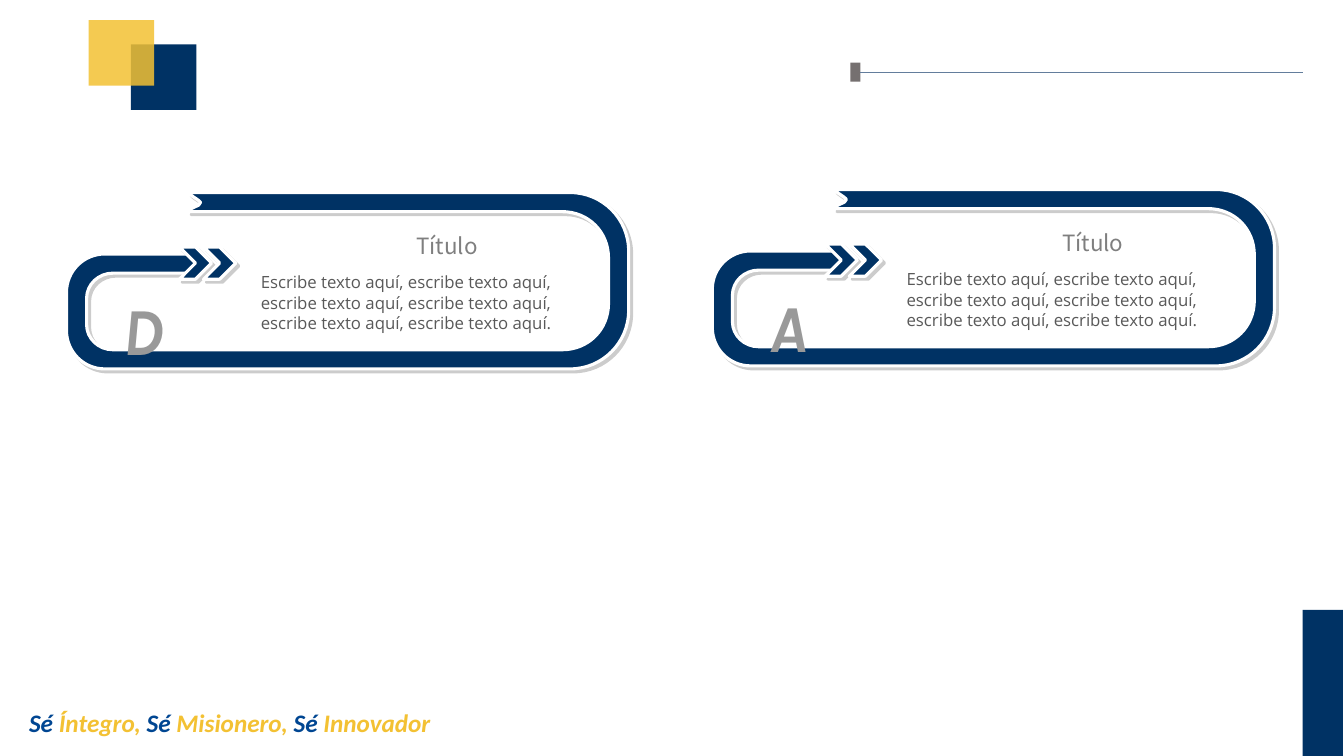
from lxml.etree import SubElement
from pptx import Presentation
from pptx.dml.color import RGBColor
from pptx.enum.shapes import MSO_CONNECTOR, MSO_SHAPE as SHAPE
from pptx.enum.text import MSO_AUTO_SIZE, PP_ALIGN as ALIGN
from pptx.oxml.ns import qn
from pptx.util import Inches, Pt

NAVY, GOLD, WHITE = "003264", "F3C133", "FFFFFF"
SLOGAN_BLUE = "004692"
BODY = ", ".join(["Escribe texto aquí"] + ["escribe texto aquí"] * 5) + "."

# Ribbon outline in inches from its corner: a pair is a line end,
# six numbers are two Bézier controls and an end.
RIBBON_START = (1.21, 0)
RIBBON = [
    (5, 0), (5.32, 0, 5.58, 0.26, 5.58, 0.58),
    (5.58, 1.17), (5.58, 1.49, 5.32, 1.75, 5, 1.75),
    (1.28, 1.75), (1.21, 1.75),
    (0.38, 1.75), (0.17, 1.75, 0, 1.58, 0, 1.37),
    (0, 0.99), (0, 0.78, 0.17, 0.61, 0.38, 0.61),
    (1.28, 0.61), (1.28, 0.8),
    (0.46, 0.8), (0.32, 0.8, 0.2, 0.91, 0.2, 1.05),
    (0.2, 1.31), (0.2, 1.45, 0.32, 1.56, 0.46, 1.56),
    (1.28, 1.56),
    (4.92, 1.56), (5.18, 1.56, 5.38, 1.36, 5.38, 1.1),
    (5.38, 0.65), (5.38, 0.39, 5.18, 0.19, 4.92, 0.19),
    (1.21, 0.19), (1.21, 0.15, 1.33, 0.14, 1.33, 0.1),
    (1.33, 0.08, 1.21, 0.02, 1.21, 0),
]


def color(code):
    return RGBColor.from_string(code)


def bend(shape, segments):
    """Turn the straight segments that have controls into Bézier curves."""
    lines = list(shape._element.iter(qn("a:lnTo")))
    for line, segment in zip(lines, segments):
        if len(segment) == 6:
            line.tag = qn("a:cubicBezTo")
            line.clear()
            for x, y in zip(segment[::2], segment[1::2]):
                SubElement(line, qn("a:pt"), x=str(Inches(x)), y=str(Inches(y)))


class SlideBuilder:
    """Holds the current slide and draws its elements in one style."""

    def __init__(self, slide):
        self.slide = slide
        self.shapes = slide.shapes

    def paint(self, shape, fill, opacity=None):
        shape.shadow.inherit = False
        shape.fill.solid()
        shape.fill.fore_color.rgb = color(fill)
        shape.line.fill.background()
        if opacity is not None:
            fill_color = shape.fill._xPr.find(qn("a:solidFill"))[0]
            SubElement(fill_color, qn("a:alpha"), val=str(opacity * 1000))
        return shape

    def paint_raised(self, shape):
        """Navy fill, white edge and a hard shadow to the lower right."""
        self.paint(shape, NAVY)
        shape.line.color.rgb = color(WHITE)
        shape.line.width = Pt(2.25)
        effects = shape._element.spPr.find(qn("a:effectLst"))
        shadow = SubElement(effects, qn("a:outerShdw"), blurRad="0",
                            dist=str(Pt(3)), dir=str(45 * 60000),
                            algn="tl", rotWithShape="0")
        shadow_color = SubElement(shadow, qn("a:srgbClr"), val="000000")
        SubElement(shadow_color, qn("a:alpha"), val="20000")

    def shape(self, kind, left, top, width, height):
        return self.shapes.add_shape(kind, Inches(left), Inches(top),
                                     Inches(width), Inches(height))

    def rectangle(self, left, top, width, height, fill, opacity=None):
        return self.paint(self.shape(SHAPE.RECTANGLE, left, top, width, height),
                          fill, opacity)

    def chevron(self, left, top, size):
        self.paint_raised(self.shape(SHAPE.CHEVRON, left, top, size, size))

    def ribbon(self, left, top):
        start, *ends = [(Inches(x), Inches(y)) for x, y in
                        [RIBBON_START] + [segment[-2:] for segment in RIBBON]]
        builder = self.shapes.build_freeform(*start)
        builder.add_line_segments(ends, close=True)
        shape = builder.convert_to_shape(Inches(left), Inches(top))
        bend(shape, RIBBON)
        self.paint_raised(shape)

    def line_from_right(self, shape, right, line_color):
        """Draw a thin level line from the right down to a shape's right side."""
        middle = shape.top + shape.height // 2
        line = self.shapes.add_connector(MSO_CONNECTOR.STRAIGHT, Inches(right),
                                         middle, shape.left + shape.width, middle)
        line.end_connect(shape, 3)
        line.line.color.rgb = color(line_color)
        line.line.width = Pt(0.75)
        SubElement(line._element.spPr, qn("a:effectLst"))

    def text(self, runs, left, top, width, height, *, size, font,
             bold=False, italic=False, align=ALIGN.LEFT, spacing=None, wrap=True):
        """Add one paragraph; runs is a list of (text, colour) pairs."""
        box = self.shapes.add_textbox(Inches(left), Inches(top),
                                      Inches(width), Inches(height))
        frame = box.text_frame
        frame.word_wrap = wrap
        frame.auto_size = MSO_AUTO_SIZE.SHAPE_TO_FIT_TEXT
        paragraph = frame.paragraphs[0]
        paragraph.alignment = align
        paragraph.line_spacing = spacing
        for words, run_color in runs:
            run = paragraph.add_run()
            run.text = words
            run.font.size = Pt(size)
            run.font.name = font
            run.font.bold = bold
            run.font.italic = italic
            run.font.color.rgb = color(run_color)

    def card(self, letter, left, top):
        self.text([(BODY, "595959")], left + 1.83, top + 0.74, 3.59, 0.71,
                  size=12, font="Open Sans")
        self.text([("Título", "7F7F7F")], left + 3.37, top + 0.34, 0.81, 0.37,
                  size=16, font="Noto Sans CJK SC", align=ALIGN.RIGHT, wrap=False)
        self.ribbon(left, top)
        self.text([(letter, "999999")], left + 0.28, top + 0.66, 0.96, 0.91,
                  size=48, font="Karla", bold=True, italic=True,
                  align=ALIGN.CENTER, spacing=1.3)
        for index in range(2):
            self.chevron(left + 1.12 + index * 0.24, top + 0.54, 0.32)


def main():
    presentation = Presentation()
    presentation.slide_width = Inches(13.34)
    presentation.slide_height = Inches(7.5)
    builder = SlideBuilder(
        presentation.slides.add_slide(presentation.slide_layouts[6]))

    marker = builder.rectangle(8.44, 0.62, 0.1, 0.19, "757070")
    builder.line_from_right(marker, 12.93, "637D9C")
    builder.rectangle(1.3, 0.44, 0.65, 0.65, NAVY)
    builder.rectangle(0.88, 0.2, 0.65, 0.65, GOLD, opacity=85)
    slogan = [("Sé", SLOGAN_BLUE), (" Íntegro, ", GOLD),
              ("Sé", SLOGAN_BLUE), (" Misionero, ", GOLD),
              ("Sé", SLOGAN_BLUE), (" Innovador", GOLD)]
    builder.text(slogan, 0.19, 6.97, 5.56, 0.4,
                 size=18, font="Calibri", bold=True, italic=True)
    builder.rectangle(12.93, 6.05, 0.4, 1.47, NAVY)

    for letter, left, top in (("D", 0.66, 1.91), ("A", 7.07, 1.88)):
        builder.card(letter, left, top)

    presentation.save("out.pptx")


if __name__ == "__main__":
    main()
